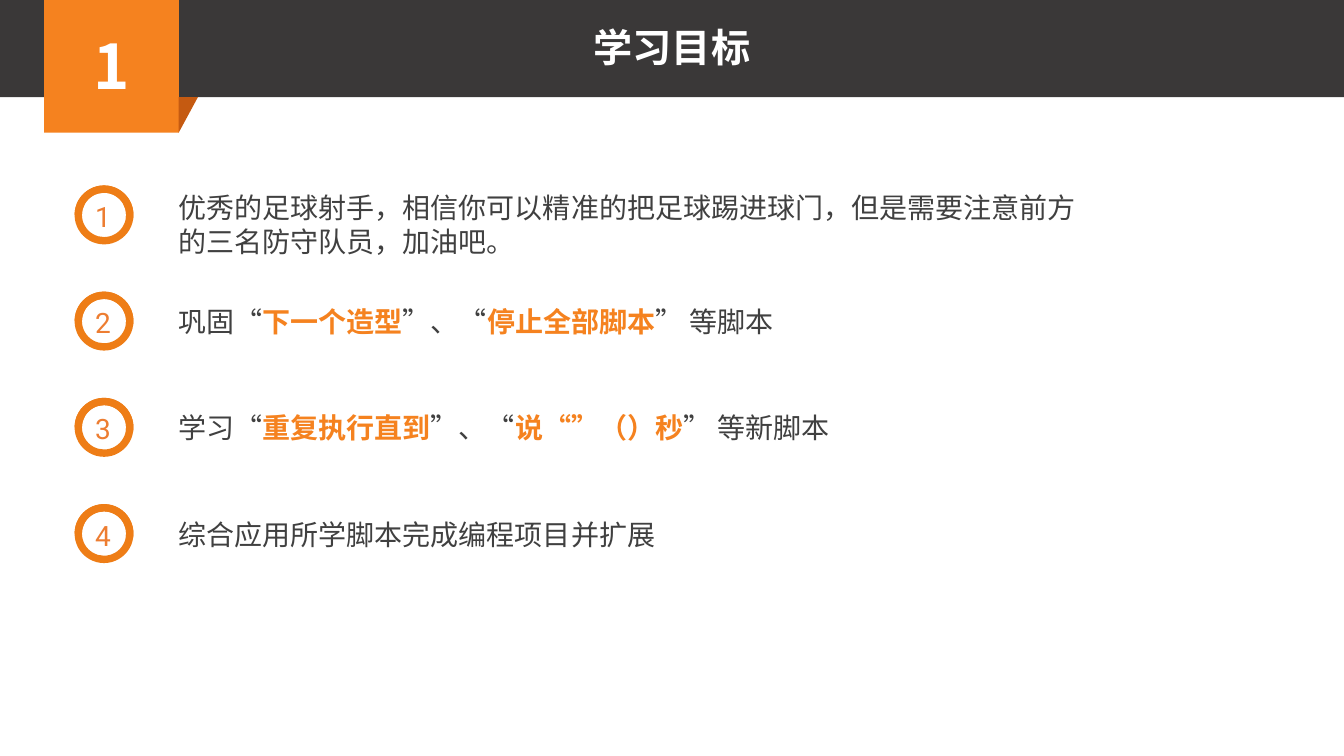
"""Build the learning goals slide with a banner and four numbered goals."""
from dataclasses import dataclass

from lxml.etree import SubElement
from pptx import Presentation
from pptx.dml.color import RGBColor
from pptx.enum.shapes import MSO_SHAPE
from pptx.enum.text import MSO_ANCHOR, PP_ALIGN
from pptx.oxml.ns import qn
from pptx.util import Inches, Pt

WIDTH, HEIGHT = Inches(13.33), Inches(7.5)
CHARCOAL = RGBColor(0x3A, 0x38, 0x38)
ORANGE = RGBColor(0xF5, 0x82, 0x1F)
RING_ORANGE = RGBColor(0xEE, 0x7D, 0x16)
NUMBER_ORANGE = RGBColor(0xED, 0x7D, 0x31)
FOLD_BROWN = RGBColor(0xC5, 0x5A, 0x11)
TEXT_GRAY = RGBColor(0x40, 0x40, 0x40)
WHITE = RGBColor(0xFF, 0xFF, 0xFF)
CHINESE_FONT, NUMBER_FONT = "Noto Sans CJK SC", "Roboto"
FIRST_ROW, ROW_PITCH = 24.53, 14.05


@dataclass(frozen=True)
class Box:
    """Position and size in percent of the slide."""
    left: float
    top: float
    width: float
    height: float

    def lengths(self) -> tuple:
        return (int(WIDTH * self.left / 100), int(HEIGHT * self.top / 100),
                int(WIDTH * self.width / 100), int(HEIGHT * self.height / 100))


@dataclass(frozen=True)
class TextStyle:
    """Look of a paragraph."""
    size: int
    color: RGBColor
    font: str = CHINESE_FONT
    bold: bool = False
    alignment: PP_ALIGN = PP_ALIGN.LEFT


@dataclass(frozen=True)
class Goal:
    """Goal wording, where every second phrase is emphasised."""
    phrases: tuple
    offset: float = 1.07
    width: float = 72.4
    height: float = 5.87


GOALS = (
    Goal(("优秀的足球射手，相信你可以精准的把足球踢进球门，但是需要注意前方的三名防守队员，加油吧。",),
         offset=0, width=69.6, height=10.27),
    Goal(("巩固“", "下一个造型", "”、“", "停止全部脚本", "” 等脚本")),
    Goal(("学习“", "重复执行直到", "”、“", "说“”（）秒", "” 等新脚本")),
    Goal(("综合应用所学脚本完成编程项目并扩展",)),
)
BADGE_STYLE = TextStyle(44, WHITE, bold=True, alignment=PP_ALIGN.CENTER)
TITLE_STYLE = TextStyle(28, WHITE, bold=True, alignment=PP_ALIGN.CENTER)
NUMBER_STYLE = TextStyle(20, NUMBER_ORANGE, NUMBER_FONT)
GOAL_STYLE = TextStyle(20, TEXT_GRAY)


def write(shape, phrases: tuple, style: TextStyle) -> None:
    paragraph = shape.text_frame.paragraphs[0]
    paragraph.alignment = style.alignment
    font = paragraph.font
    font.size, font.bold, font.name = Pt(style.size), style.bold, style.font
    font.color.rgb = style.color
    properties = paragraph._p.pPr.find(qn("a:defRPr"))
    SubElement(properties, qn("a:ea")).set("typeface", style.font)
    for index, phrase in enumerate(phrases):
        run = paragraph.add_run()
        run.text = phrase
        if index % 2:
            run.font.bold = True
            run.font.color.rgb = ORANGE


def add_filled(shapes, kind: MSO_SHAPE, box: Box, color: RGBColor, adjustments: tuple = ()):
    shape = shapes.add_shape(kind, *box.lengths())
    shape.shadow.inherit = False
    shape.fill.solid()
    shape.fill.fore_color.rgb = color
    shape.line.fill.background()
    for index, value in enumerate(adjustments):
        shape.adjustments[index] = value
    return shape


def add_text(shapes, box: Box, phrases: tuple, style: TextStyle, wrap: bool = True) -> None:
    shape = shapes.add_textbox(*box.lengths())
    shape.text_frame.word_wrap = wrap
    write(shape, phrases, style)


def add_banner(shapes) -> None:
    add_filled(shapes, MSO_SHAPE.RECTANGLE, Box(0, -0.4, 100, 13.25), CHARCOAL)
    badge = add_filled(shapes, MSO_SHAPE.RECTANGLE, Box(3.28, -0.4, 10.03, 17.95), ORANGE)
    badge.text_frame.vertical_anchor = MSO_ANCHOR.MIDDLE
    write(badge, ("1",), BADGE_STYLE)
    fold = add_filled(shapes, MSO_SHAPE.RIGHT_TRIANGLE, Box(13.3, 12.85, 1.43, 4.7), FOLD_BROWN)
    fold._element.spPr.xfrm.set("flipV", "1")
    add_text(shapes, Box(33.6, 2.4, 32.8, 7.6), ("学习目标",), TITLE_STYLE)


def add_goal(shapes, number: int, goal: Goal) -> None:
    top = FIRST_ROW + (number - 1) * ROW_PITCH
    group = shapes.add_group_shape().shapes
    ring = Box(5.55, top, 4.38, 7.8)
    add_filled(group, MSO_SHAPE.DONUT, ring, RING_ORANGE, (0.125,))
    add_filled(group, MSO_SHAPE.BLOCK_ARC, ring, RING_ORANGE, (107.95, 5.13, 0.125))
    add_text(group, Box(6.35, top + 1.2, 2.7, 5.87), (str(number),), NUMBER_STYLE, wrap=False)
    add_text(shapes, Box(12.53, top + goal.offset, goal.width, goal.height), goal.phrases, GOAL_STYLE)


def main() -> None:
    presentation = Presentation()
    presentation.slide_width, presentation.slide_height = WIDTH, HEIGHT
    slide = presentation.slides.add_slide(presentation.slide_layouts[6])
    add_banner(slide.shapes)
    for number, goal in enumerate(GOALS, start=1):
        add_goal(slide.shapes, number, goal)
    presentation.save("out.pptx")


if __name__ == "__main__":
    main()
